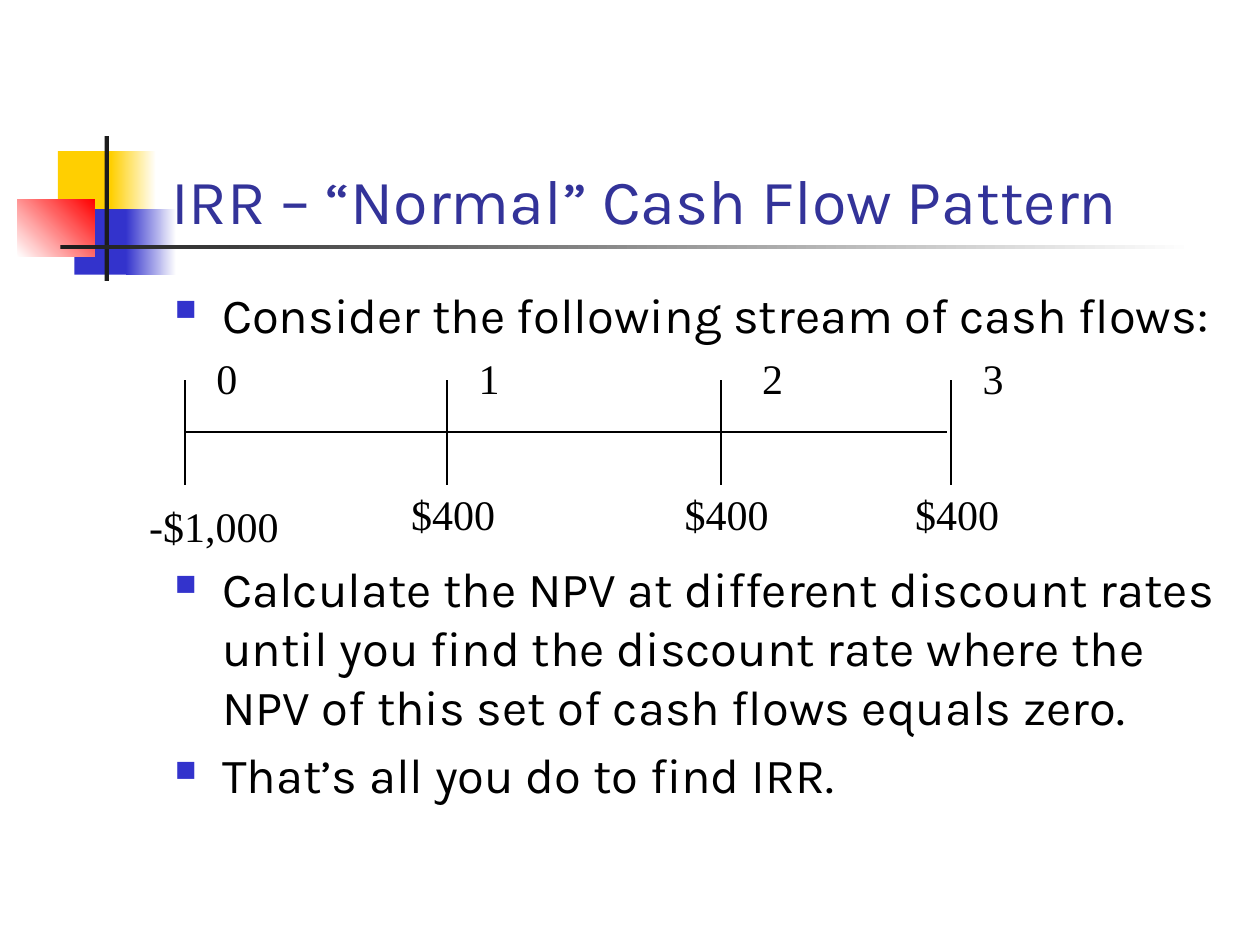
import pptx
import pptx.dml.color
import pptx.enum.shapes
import pptx.enum.text
import pptx.oxml
import pptx.oxml.ns
import pptx.util


def color(value):
    return pptx.dml.color.RGBColor.from_string(value)


class SlideBuilder:
    COLUMNS, ROWS = 100, 75
    BLACK, INK, BLUE, TITLE = "000000", "1C1C1C", "3333CC", "333399"
    YELLOW, RED, WHITE = "FFCF01", "FF0000", "FFFFFF"
    HEADING_FONT, LABEL_FONT = "Karla", "Times New Roman"

    def __init__(self, deck):
        self.width, self.height = deck.slide_width, deck.slide_height
        self.slide = deck.slides.add_slide(deck.slide_layouts[6])

    def x(self, columns):
        return round(self.width * columns / self.COLUMNS)

    def y(self, rows):
        return round(self.height * rows / self.ROWS)

    def area(self, left, top, width, height):
        return self.x(left), self.y(top), self.x(width), self.y(height)

    def block(self, area, start, end=None, angle=0):
        block = self.slide.shapes.add_shape(
            pptx.enum.shapes.MSO_SHAPE.RECTANGLE, *self.area(*area))
        block.shadow.inherit = False
        block.line.fill.background()
        if end is None:
            block.fill.solid()
            block.fill.fore_color.rgb = color(start)
            return
        block.fill.gradient()
        block.fill.gradient_angle = angle
        for stop, shade in zip(block.fill.gradient_stops, (start, end)):
            stop.color.rgb = color(shade)

    def line(self, x1, y1, x2, y2):
        line = self.slide.shapes.add_connector(
            pptx.enum.shapes.MSO_CONNECTOR.STRAIGHT,
            self.x(x1), self.y(y1), self.x(x2), self.y(y2))
        line.line.color.rgb = color(self.BLACK)
        line.line.width = pptx.util.Pt(1)
        line._element.spPr.append(pptx.oxml.parse_xml(
            f"<a:effectLst {pptx.oxml.ns.nsdecls('a')}/>"))

    def text(self, area, content, size, font, shade, wrap=True):
        frame = self.slide.shapes.add_textbox(*self.area(*area)).text_frame
        frame.word_wrap = wrap
        frame.text = content
        for paragraph in frame.paragraphs:
            for run in paragraph.runs:
                run.font.size = pptx.util.Pt(size)
                run.font.name = font
                run.font.color.rgb = color(shade)
        return frame

    def title(self, area, content):
        frame = self.text(area, content, 36, self.HEADING_FONT, self.TITLE)
        frame.vertical_anchor = pptx.enum.text.MSO_ANCHOR.BOTTOM

    def label(self, left, top, width, content):
        frame = self.text((left, top, width, 5), content, 24,
                          self.LABEL_FONT, self.BLACK, wrap=False)
        frame.auto_size = pptx.enum.text.MSO_AUTO_SIZE.SHAPE_TO_FIT_TEXT

    def bullets(self, area, points):
        content = "\n".join(point for point, gap in points)
        frame = self.text(area, content, 28, self.HEADING_FONT, self.BLACK)
        indent = self.x(3.75)
        namespace = pptx.oxml.ns.nsdecls("a")
        for paragraph, (point, gap) in zip(frame.paragraphs, points):
            paragraph.space_before = pptx.util.Pt(gap)
            properties = paragraph._p.get_or_add_pPr()
            properties.set("marL", str(indent))
            properties.set("indent", str(-indent))
            for mark in (f'<a:buClr {namespace}><a:srgbClr val="{self.BLUE}"/></a:buClr>',
                         f'<a:buSzPct {namespace} val="60000"/>',
                         f'<a:buChar {namespace} char="■"/>'):
                properties.append(pptx.oxml.parse_xml(mark))


def main():
    deck = pptx.Presentation()
    deck.slide_width = pptx.util.Inches(10)
    deck.slide_height = pptx.util.Inches(7.5)
    page = SlideBuilder(deck)

    page.block((4.6, 12, 4.8, 5.2), page.YELLOW)
    page.block((8.8, 12, 3.6, 5.2), page.YELLOW, page.WHITE)
    page.block((5.9, 16.6, 4.6, 5.2), page.BLUE)
    page.block((10, 16.6, 4, 5.2), page.BLUE, page.WHITE)
    page.block((1.4, 15.8, 6.1, 4.6), page.WHITE, page.RED, angle=45)
    page.block((8.3, 10.8, 0.35, 11.5), page.INK)
    page.block((4.8, 19.45, 90, 0.35), page.INK, page.WHITE)

    page.title((12.6, 6.8, 85.2, 12.5), "IRR – “Normal” Cash Flow Pattern")
    page.bullets((12.9, 22.1, 85, 45), [
        ("Consider the following stream of cash flows:", 5.6),
        ("Calculate the NPV at different discount rates until you find the "
         "discount rate where the NPV of this set of cash flows equals zero.", 123),
        ("That’s all you do to find IRR.", 5.6),
    ])

    page.line(14.7, 34.3, 75.2, 34.3)
    cash_flows = [
        (14.7, 16.2, "-$1,000", 39.2, 12.3),
        (35.5, 37, "$400", 38.3, 8.7),
        (57.2, 59.5, "$400", 38.3, 8.7),
        (75.5, 77, "$400", 38.3, 8.7),
    ]
    for year, (tick, year_left, amount, amount_top, amount_width) in enumerate(cash_flows):
        page.line(tick, 30.2, tick, 38.5)
        page.label(year_left, 27.5, 3.7, str(year))
        page.label(tick - 3.85, amount_top, amount_width, amount)

    deck.save("out.pptx")


if __name__ == "__main__":
    main()
